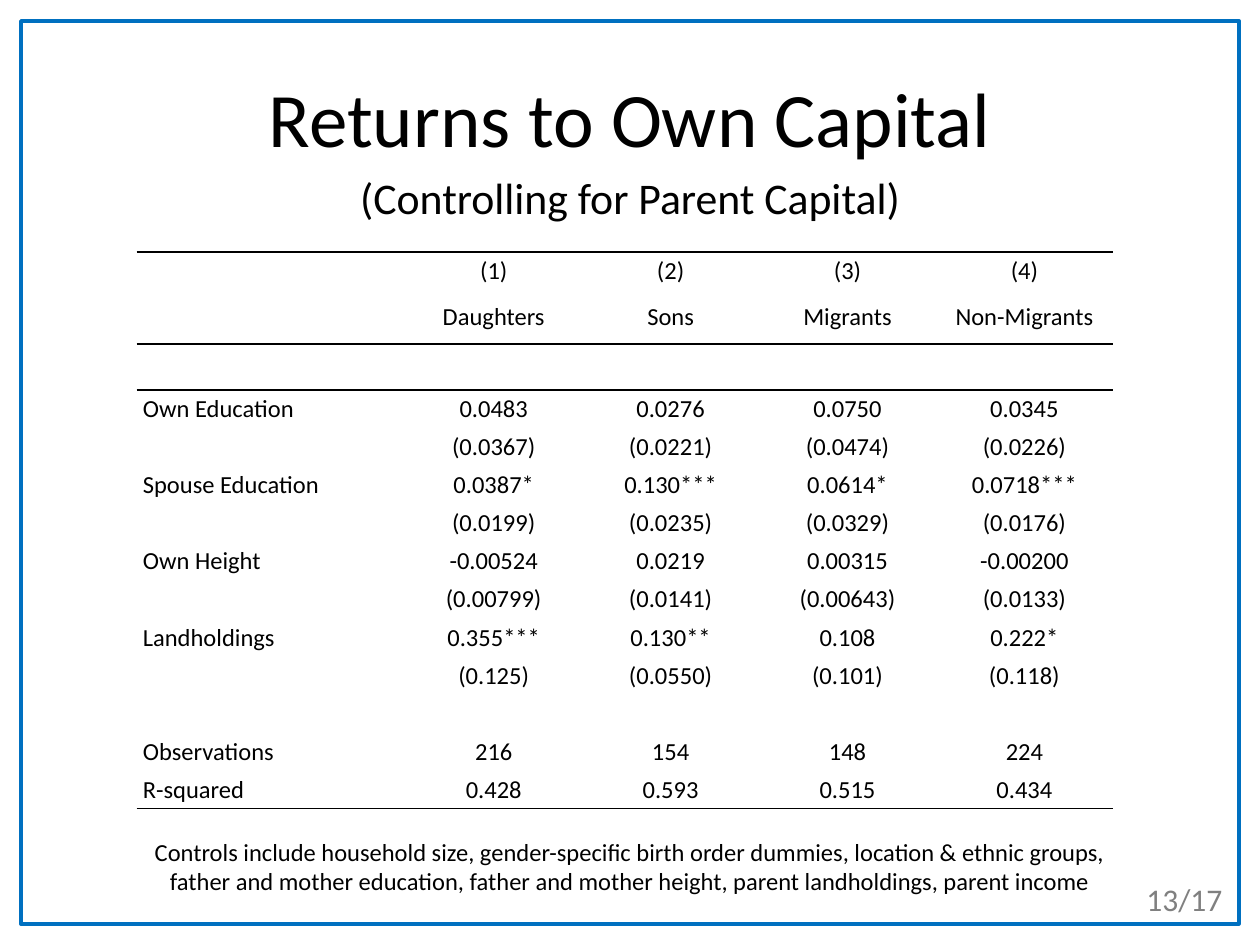
from lxml.etree import SubElement
from pptx import Presentation
from pptx.dml.color import RGBColor
from pptx.enum.shapes import MSO_SHAPE as Shape
from pptx.enum.text import MSO_ANCHOR as Anchor, MSO_AUTO_SIZE as AutoSize, PP_ALIGN as Align
from pptx.oxml import parse_xml
from pptx.oxml.ns import nsdecls, qn
from pptx.util import Inches, Pt

COLORS = {"frame": "0070C0", "ink": "000000", "page": "808080"}
FONT = "Calibri"
SLIDE_WIDTH, SLIDE_HEIGHT = Inches(10), Inches(7.5)
COLUMN, ROW = SLIDE_WIDTH / 120, SLIDE_HEIGHT / 90
PLAIN_TABLE_STYLE = "{2D5ABB26-0587-4C30-8999-92F81FD0307C}"
TABLE_TEXT_SIZE = 14
LABEL_COLUMN, HEADER_ROW = 25.6, 4.38
HEADER_ROWS = 3

RESULTS = [
    ["", "(1)", "(2)", "(3)", "(4)"],
    ["", "Daughters", "Sons", "Migrants", "Non-Migrants"],
    [""] * 5,
    ["Own Education", "0.0483", "0.0276", "0.0750", "0.0345"],
    ["", "(0.0367)", "(0.0221)", "(0.0474)", "(0.0226)"],
    ["Spouse Education", "0.0387*", "0.130***", "0.0614*", "0.0718***"],
    ["", "(0.0199)", "(0.0235)", "(0.0329)", "(0.0176)"],
    ["Own Height", "-0.00524", "0.0219", "0.00315", "-0.00200"],
    ["", "(0.00799)", "(0.0141)", "(0.00643)", "(0.0133)"],
    ["Landholdings", "0.355***", "0.130**", "0.108", "0.222*"],
    ["", "(0.125)", "(0.0550)", "(0.101)", "(0.118)"],
    [""] * 5,
    ["Observations", "216", "154", "148", "224"],
    ["R-squared", "0.428", "0.593", "0.515", "0.434"],
]
RULES = {0: ["lnT"], 1: ["lnB"], 2: ["lnT"], len(RESULTS) - 1: ["lnB"]}
NOTES = [
    "Controls include household size, gender-specific birth order dummies, location & ethnic groups,",
    "father and mother education, father and mother height, parent landholdings, parent income",
]


def grid_box(left, top, width, height):
    return [round(left * COLUMN), round(top * ROW), round(width * COLUMN), round(height * ROW)]


def write(paragraph, text, size, color="ink", align=Align.CENTER):
    paragraph.alignment = align
    run = paragraph.add_run()
    run.text = text
    run.font.name, run.font.size = FONT, Pt(size)
    run.font.color.rgb = RGBColor.from_string(COLORS[color])


def add_frame(slide, box):
    frame = slide.shapes.add_shape(Shape.RECTANGLE, *box)
    frame.shadow.inherit = False
    frame.fill.background()
    frame.line.color.rgb = RGBColor.from_string(COLORS["frame"])
    frame.line.width = Pt(2)


def add_title(slide, box, text):
    title = slide.shapes.title
    title.left, title.top, title.width, title.height = box
    title.text_frame.vertical_anchor = Anchor.MIDDLE
    write(title.text_frame.paragraphs[0], text, 44)


def add_caption(slide, box, lines, size, color="ink", align=Align.CENTER):
    caption = slide.shapes.add_textbox(*box).text_frame
    caption.word_wrap = True
    caption.auto_size = AutoSize.SHAPE_TO_FIT_TEXT
    for index, line in enumerate(lines):
        paragraph = caption.add_paragraph() if index else caption.paragraphs[0]
        write(paragraph, line, size, color, align)


def add_rule(cell, side):
    rule = parse_xml(
        f'<a:{side} {nsdecls("a")} w="{Pt(1)}"><a:solidFill>'
        f'<a:srgbClr val="{COLORS["ink"]}"/></a:solidFill></a:{side}>'
    )
    cell._tc.get_or_add_tcPr().insert(0, rule)


def fill_cell(cell, text, align):
    cell.margin_left = cell.margin_right = Inches(0.05)
    cell.margin_top = cell.margin_bottom = 0
    cell.vertical_anchor = Anchor.TOP
    cell.fill.background()
    paragraph = cell.text_frame.paragraphs[0]
    paragraph.line_spacing = 1.15
    if text:
        write(paragraph, text, TABLE_TEXT_SIZE, align=align)
    else:
        SubElement(paragraph._p, qn("a:endParaRPr")).set("sz", str(TABLE_TEXT_SIZE * 100))


def add_results(slide, box):
    row_count, column_count = len(RESULTS), len(RESULTS[0])
    results = slide.shapes.add_table(row_count, column_count, *box).table
    results.first_row = results.horz_banding = False
    results._tbl.tblPr.find(qn("a:tableStyleId")).text = PLAIN_TABLE_STYLE

    label_width, header_height = round(LABEL_COLUMN * COLUMN), round(HEADER_ROW * ROW)
    value_width = (box[2] - label_width) // (column_count - 1)
    body_height = (box[3] - HEADER_ROWS * header_height) // (row_count - HEADER_ROWS)
    for index, column in enumerate(results.columns):
        column.width = value_width if index else label_width
    for index, row in enumerate(results.rows):
        row.height = header_height if index < HEADER_ROWS else body_height

    for row_index, values in enumerate(RESULTS):
        for column_index, value in enumerate(values):
            cell = results.cell(row_index, column_index)
            fill_cell(cell, value, Align.CENTER if column_index else Align.LEFT)
            for side in RULES.get(row_index, []):
                add_rule(cell, side)


def main():
    deck = Presentation()
    deck.slide_width, deck.slide_height = SLIDE_WIDTH, SLIDE_HEIGHT
    slide = deck.slides.add_slide(deck.slide_layouts[5])
    add_frame(slide, grid_box(2, 2, 116, 86))
    add_title(slide, grid_box(6, 3.6, 108, 15), "Returns to Own Capital")
    add_results(slide, grid_box(13, 24, 93, 53))
    add_caption(slide, grid_box(10, 79.1, 100, 6.8), NOTES, 14)
    add_caption(slide, grid_box(10, 15.7, 100, 6.2), ["(Controlling for Parent Capital)"], 25)
    add_caption(slide, grid_box(108, 83.2, 10, 4.8), ["13/17"], 18, "page", Align.LEFT)
    deck.save("out.pptx")


if __name__ == "__main__":
    main()
